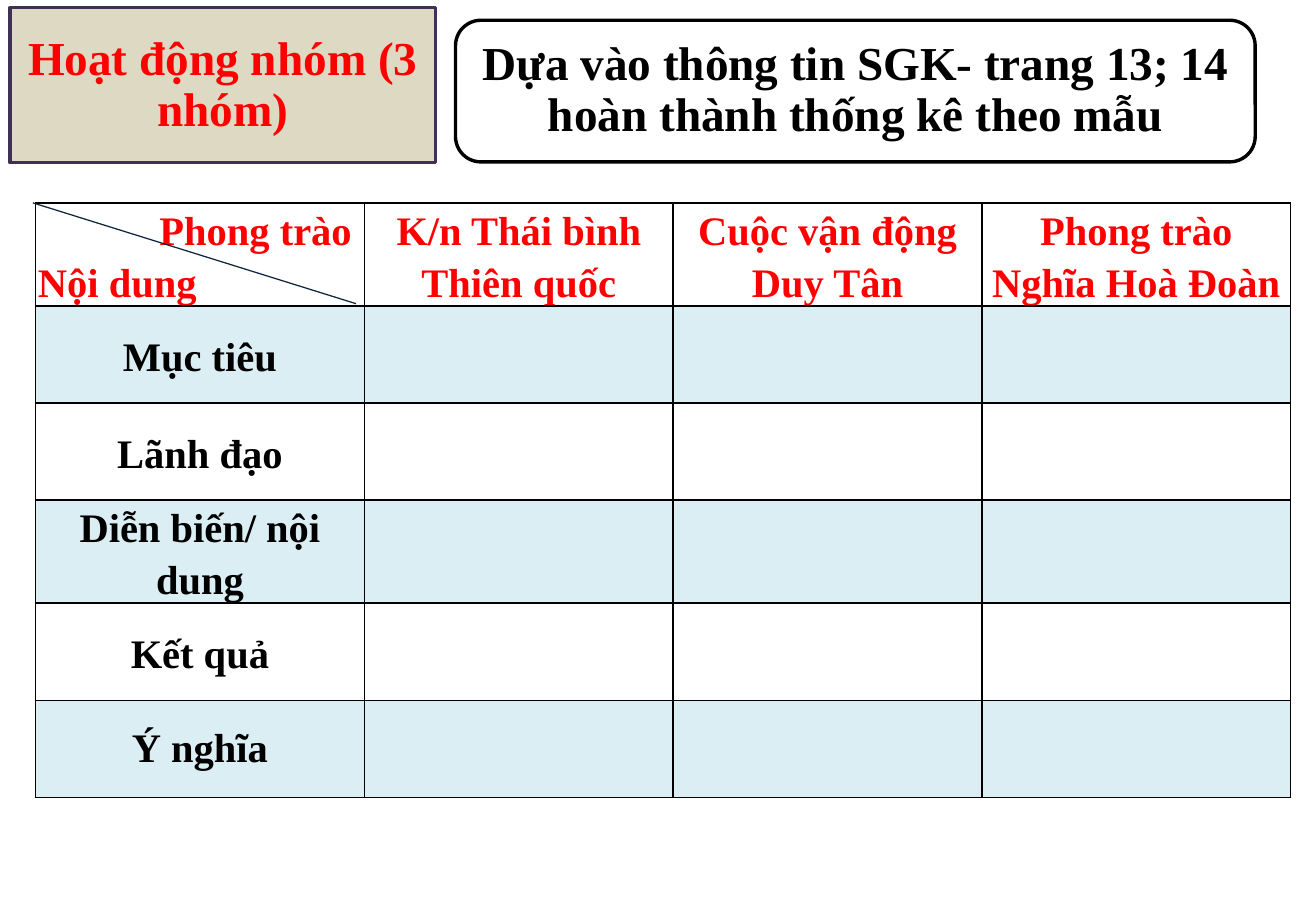
from dataclasses import dataclass
from typing import Any

import pptx
import pptx.dml.color
import pptx.enum.shapes
import pptx.enum.text
import pptx.oxml
import pptx.oxml.ns
import pptx.util
from lxml import etree

Pt = pptx.util.Pt
ALIGN = pptx.enum.text.PP_ALIGN
MIDDLE = pptx.enum.text.MSO_ANCHOR.MIDDLE
FONT = "Times New Roman"
BLACK, RED, WHITE = "000000", "FF0000", "FFFFFF"
BAND = "DBEEF4"
TABLE_LEFT, TABLE_TOP = 21, 120.25
COLUMN_WIDTHS = (195, 183, 183, 183)
ROW_HEIGHT = 57.6
MOVEMENTS = ("K/n Thái bình Thiên quốc", "Cuộc vận động Duy Tân", "Phong trào Nghĩa Hoà Đoàn")
TOPICS = ("Mục tiêu", "Lãnh đạo", "Diễn biến/ nội dung", "Kết quả", "Ý nghĩa")


@dataclass
class Banner:
    text: str
    left: float
    top: float
    width: float
    height: float
    corner: float
    fill: str
    line: str
    color: str


TITLE = Banner("Hoạt động nhóm (3 nhóm)", 6, 4.5, 252, 92, 0.25, "DDD9C3", "403152", RED)
TASK = Banner("Dựa vào thông tin SGK- trang 13; 14 hoàn thành thống kê theo mẫu",
              270, 12, 474, 84, 0.18, WHITE, BLACK, BLACK)


def rgb(color: str) -> pptx.dml.color.RGBColor:
    return pptx.dml.color.RGBColor.from_string(color)


def apply_format(target: Any, values: dict[str, Any]) -> None:
    for name, value in values.items():
        setattr(target, name, value)


def write_paragraph(paragraph: Any, text: str, size: float, color: str, **values: Any) -> None:
    run = paragraph.add_run()
    run.text = text
    apply_format(run.font, {"name": FONT, "size": Pt(size), "bold": True})
    run.font.color.rgb = rgb(color)
    apply_format(paragraph, values)


def style_banner(shape: Any, banner: Banner) -> None:
    apply_format(shape, {name: Pt(getattr(banner, name))
                         for name in ("left", "top", "width", "height")})
    shape.fill.solid()
    shape.fill.fore_color.rgb = rgb(banner.fill)
    shape.line.color.rgb = rgb(banner.line)
    shape.line.width = Pt(2)
    shape.shadow.inherit = False
    frame = shape.text_frame
    margins = {f"margin_{side}": Pt(8) for side in ("left", "top", "right", "bottom")}
    apply_format(frame, {"word_wrap": True, "vertical_anchor": MIDDLE,
                         "auto_size": pptx.enum.text.MSO_AUTO_SIZE.NONE, **margins})
    write_paragraph(frame.paragraphs[0], banner.text, 28, banner.color,
                    alignment=ALIGN.CENTER, line_spacing=0.9)


def round_title(title: Any, corner: float) -> None:
    """Give the title placeholder a rounded outline, before its fill and line are set."""
    title._element.spPr.append(pptx.oxml.parse_xml(
        f'<a:prstGeom {pptx.oxml.ns.nsdecls("a")} prst="roundRect"><a:avLst>'
        f'<a:gd name="adj" fmla="val {round(corner * 100000)}"/></a:avLst></a:prstGeom>'))


def add_border(cell: Any) -> None:
    properties = cell._tc.get_or_add_tcPr()
    for index, side in enumerate(("lnL", "lnR", "lnT", "lnB")):
        properties.insert(index, pptx.oxml.parse_xml(
            f'<a:{side} {pptx.oxml.ns.nsdecls("a")} w="{Pt(1)}"><a:solidFill>'
            f'<a:srgbClr val="{BLACK}"/></a:solidFill></a:{side}>'))


def write_cell(cell: Any, text: str, color: str, **values: Any) -> None:
    apply_format(cell, {"vertical_anchor": MIDDLE, "margin_left": Pt(1.5), "margin_right": Pt(1.5),
                        "margin_top": 0, "margin_bottom": 0})
    layout = {"alignment": ALIGN.CENTER, "line_spacing": 1.15} | values
    write_paragraph(cell.text_frame.paragraphs[0], text, 24, color, **layout)


def write_corner(cell: Any) -> None:
    """Write the two headings of the split corner cell."""
    write_cell(cell, "Phong trào", RED, alignment=ALIGN.LEFT)
    cell.text_frame.paragraphs[0]._p.get_or_add_pPr().set("marL", str(Pt(72)))
    write_paragraph(cell.text_frame.add_paragraph(), "Nội dung", 24, RED,
                    alignment=ALIGN.JUSTIFY, line_spacing=1.15)


def add_summary_table(slide: Any) -> None:
    row_count = len(TOPICS) + 1
    table = slide.shapes.add_table(
        row_count, len(COLUMN_WIDTHS), Pt(TABLE_LEFT), Pt(TABLE_TOP),
        Pt(sum(COLUMN_WIDTHS)), Pt(ROW_HEIGHT * row_count)).table
    apply_format(table, {"first_row": False, "horz_banding": False})
    for column, width in zip(table.columns, COLUMN_WIDTHS):
        column.width = Pt(width)
    for row_index, row in enumerate(table.rows):
        row.height = Pt(ROW_HEIGHT)
        for cell in row.cells:
            if row_index % 2:
                cell.fill.solid()
                cell.fill.fore_color.rgb = rgb(BAND)
            else:
                cell.fill.background()
            add_border(cell)
    write_corner(table.cell(0, 0))
    for column_index, movement in enumerate(MOVEMENTS, 1):
        write_cell(table.cell(0, column_index), movement, RED)
    for row_index, topic in enumerate(TOPICS, 1):
        write_cell(table.cell(row_index, 0), topic, BLACK)
    last_paragraph = table.cell(len(TOPICS), 0).text_frame.paragraphs[0]
    apply_format(last_paragraph, {"line_spacing": 1.0, "space_before": Pt(6), "space_after": Pt(6)})


def add_corner_diagonal(slide: Any) -> None:
    diagonal = slide.shapes.add_connector(
        pptx.enum.shapes.MSO_CONNECTOR.STRAIGHT, Pt(19.5), Pt(TABLE_TOP), Pt(211), Pt(180))
    diagonal.line.color.rgb = rgb("0F243E")
    diagonal.line.width = Pt(0.75)
    etree.SubElement(diagonal._element.spPr, pptx.oxml.ns.qn("a:effectLst"))


def main() -> None:
    presentation = pptx.Presentation()
    apply_format(presentation, {"slide_width": Pt(780), "slide_height": Pt(540)})
    slide = presentation.slides.add_slide(presentation.slide_layouts[5])
    title = slide.shapes.title
    title.left = Pt(TITLE.left)
    round_title(title, TITLE.corner)
    style_banner(title, TITLE)
    task = slide.shapes.add_shape(pptx.enum.shapes.MSO_SHAPE.ROUNDED_RECTANGLE, 0, 0, 0, 0)
    task.adjustments[0] = TASK.corner
    style_banner(task, TASK)
    add_summary_table(slide)
    add_corner_diagonal(slide)
    presentation.save("out.pptx")


if __name__ == "__main__":
    main()
